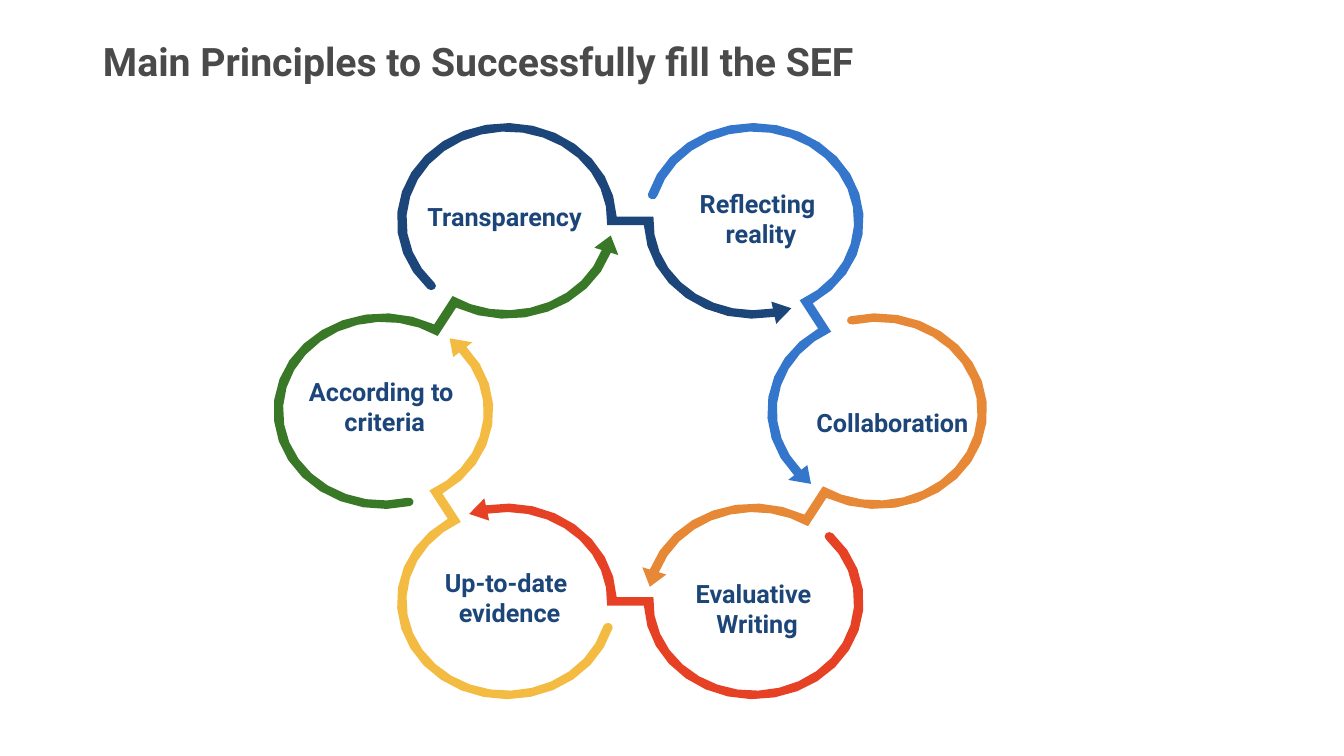
import math
from dataclasses import dataclass

import pptx
import pptx.dml.color
import pptx.enum.text
import pptx.util

Cm = pptx.util.Cm
Point = tuple[float, float]

FONT = "Roboto"
LABEL_COLOUR = "1C4679"

# Ring geometry in cm and degrees; heights are flattened by SQUASH
CENTRE_X, CENTRE_Y = 15.88, 10.36
HEXAGON_RADIUS = 6.22
SQUASH = 0.89
LOOP_RADIUS = 2.65
HALF_BAND = 0.12
HALF_HEAD = 0.32
TAIL_ANGLE, HEAD_ANGLE, TIP_ANGLE = 136, 79, 69
ARC_STEP, CAP_STEP = 12, 45


@dataclass
class Principle:
    text: str
    colour: str
    left: float
    top: float
    width: float
    height: float = 1.8


# Clockwise from the upper left
PRINCIPLES = [
    Principle("Transparency", "1C4679", 10.44, 4.95, 4.55, 1.02),
    Principle("Reflecting reality ", "3376CC", 16.81, 4.6, 4.55),
    Principle("Collaboration ", "E68835", 20.12, 9.75, 4.55),
    Principle("Evaluative Writing ", "E64125", 16.71, 14.43, 4.55),
    Principle("Up-to-date evidence ", "F3BB41", 10.06, 14.15, 5.38),
    Principle("According to criteria ", "397826", 7.09, 9.35, 5.03),
]


def rgb(colour: str) -> pptx.dml.color.RGBColor:
    return pptx.dml.color.RGBColor.from_string(colour)


def polar(centre: Point, radius: float, degrees: float) -> Point:
    angle = math.radians(degrees)
    return centre[0] + radius * math.cos(angle), centre[1] + radius * math.sin(angle)


def arc(centre: Point, radius: float, start: float, end: float, step: float = ARC_STEP) -> list[Point]:
    count = round(abs(end - start) / step)
    return [polar(centre, radius, start + (end - start) * i / count) for i in range(count + 1)]


def link_outline(turn: float) -> list[Point]:
    """Outline from one loop, across the bar and around the next to the arrow tip."""
    first = polar((0, 0), HEXAGON_RADIUS, turn - 120)
    second = polar((0, 0), HEXAGON_RADIUS, turn - 60)
    outer, inner = LOOP_RADIUS + HALF_BAND, LOOP_RADIUS - HALF_BAND
    outer_joint = math.degrees(math.asin(HALF_BAND / outer))
    inner_joint = math.degrees(math.asin(HALF_BAND / inner))
    tail, head, tip = turn + TAIL_ANGLE, turn + HEAD_ANGLE, turn + TIP_ANGLE
    return [
        *arc(first, outer, tail, turn + 360 - outer_joint),
        *arc(second, inner, turn + 180 + inner_joint, head),
        polar(second, LOOP_RADIUS - HALF_HEAD, head),
        polar(second, LOOP_RADIUS, tip),
        polar(second, LOOP_RADIUS + HALF_HEAD, head),
        *arc(second, outer, head, turn + 180 - outer_joint),
        *arc(first, inner, turn + 360 + inner_joint, tail),
        *arc(polar(first, LOOP_RADIUS, tail), HALF_BAND, tail - 180, tail, CAP_STEP)[1:-1],
    ]


def add_link(page, turn: float, colour: str) -> None:
    points = [(Cm(CENTRE_X + x), Cm(CENTRE_Y + SQUASH * y)) for x, y in link_outline(turn)]
    builder = page.shapes.build_freeform(*points[0])
    builder.add_line_segments(points[1:], close=True)
    link = builder.convert_to_shape()
    link.shadow.inherit = False
    link.fill.solid()
    link.fill.fore_color.rgb = rgb(colour)
    link.line.fill.background()


def format_text(frame, text: str, size: float, colour: str) -> None:
    frame.text = text
    frame.word_wrap = True
    frame.vertical_anchor = pptx.enum.text.MSO_ANCHOR.MIDDLE
    font = frame.paragraphs[0].font
    font.name, font.size, font.bold = FONT, pptx.util.Pt(size), True
    font.color.rgb = rgb(colour)


def add_label(page, item: Principle) -> None:
    box = page.shapes.add_textbox(Cm(item.left), Cm(item.top), Cm(item.width), Cm(item.height))
    format_text(box.text_frame, item.text, 18, LABEL_COLOUR)
    para = box.text_frame.paragraphs[0]
    para.alignment = pptx.enum.text.PP_ALIGN.CENTER
    para._p.get_or_add_pPr().set("rtl", "1")


def main() -> None:
    deck = pptx.Presentation()
    deck.slide_width, deck.slide_height = Cm(33.86), Cm(19.05)
    page = deck.slides.add_slide(deck.slide_layouts[5])

    # Title
    title = page.shapes.title
    title.left, title.top, title.width, title.height = Cm(2.34), Cm(0.58), Cm(28.32), Cm(2.06)
    format_text(title.text_frame, "Main Principles to Successfully fill the SEF", 28, "4A4A4A")
    title.text_frame.paragraphs[0].alignment = pptx.enum.text.PP_ALIGN.LEFT
    title.text_frame.paragraphs[0].line_spacing = 0.9

    # Ring of linked loops, then their labels
    for i, item in enumerate(PRINCIPLES):
        add_link(page, 60 * i, item.colour)
    for item in PRINCIPLES:
        add_label(page, item)

    deck.save("out.pptx")


if __name__ == "__main__":
    main()
